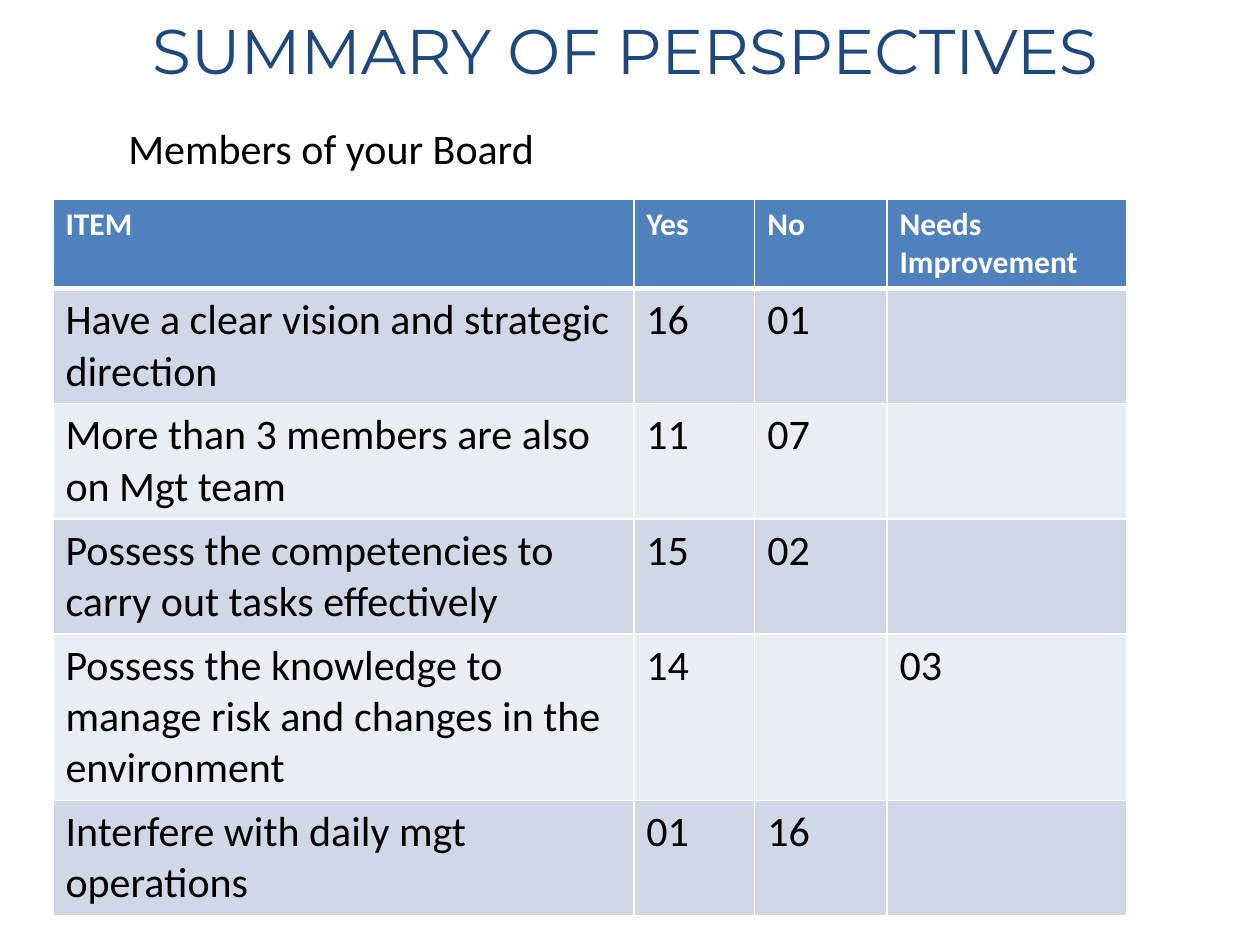
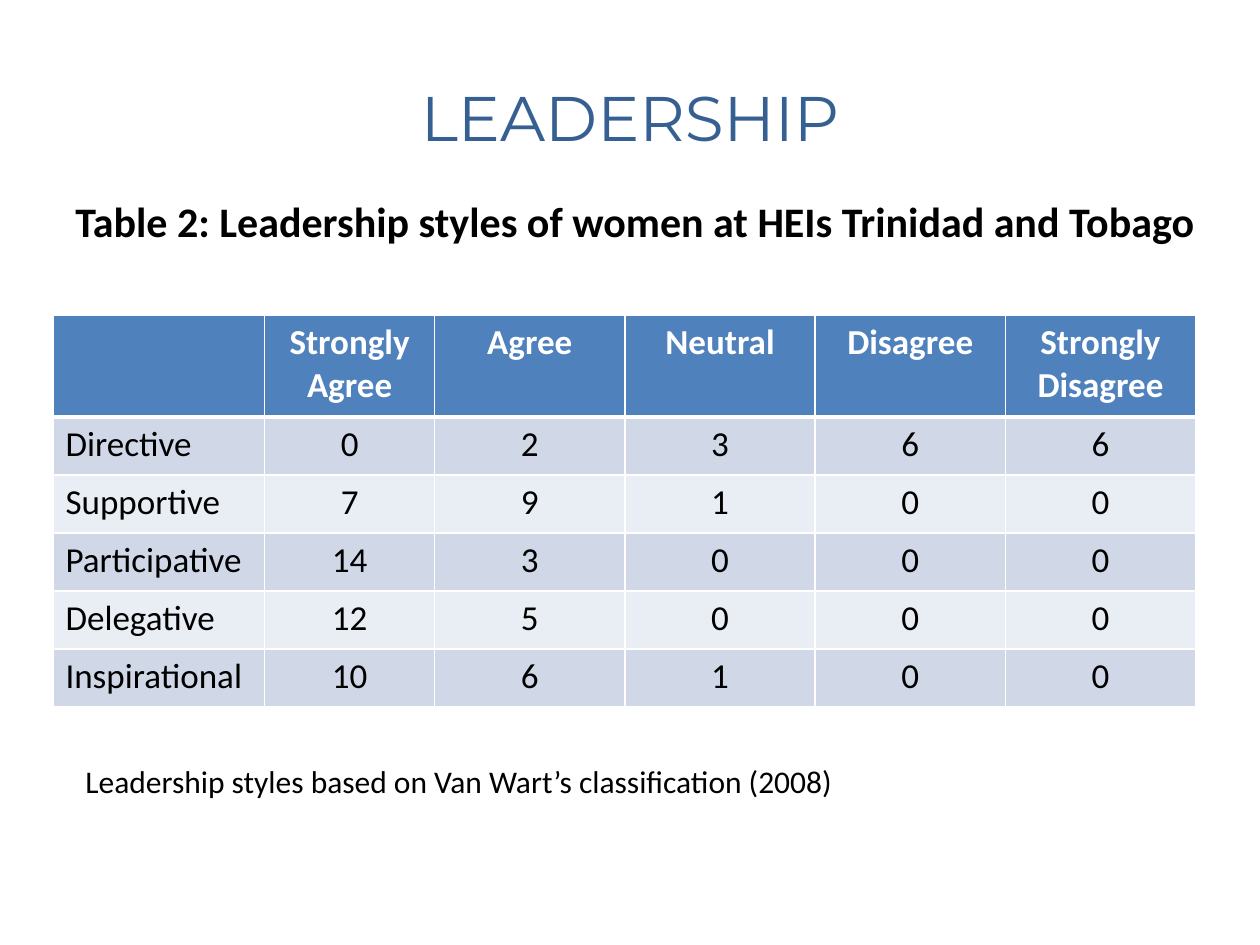
import lxml.etree
import pptx
import pptx.dml.color
import pptx.enum.text
import pptx.oxml.ns
import pptx.util

Inches = pptx.util.Inches
Pt = pptx.util.Pt
ALIGN = pptx.enum.text.PP_ALIGN
ANCHOR = pptx.enum.text.MSO_ANCHOR
AUTO_SIZE = pptx.enum.text.MSO_AUTO_SIZE

TITLE_FONT, BODY_FONT = "Montserrat", "Calibri"
TITLE_NAVY, TITLE_BLUE = "1F497D", "376092"
BLACK, WHITE = "000000", "FFFFFF"
HEADER_FILL = "4F81BD"
BAND_FILLS = ("D0D8E8", "E9EDF4")
TABLE_LEFT = 0.42
RULE, HEADER_RULE = 1, 3

BOARD_COLUMNS = [4.61, 0.96, 1.05, 1.9]
BOARD_HEIGHTS = [0.71, 0.91, 0.91, 0.91, 1.32, 0.91]
BOARD_ROWS = [
    ["ITEM", "Yes", "No", "Needs Improvement"],
    ["Have a clear vision and strategic direction", "16", "01", ""],
    ["More than 3 members are also on Mgt team", "11", "07", ""],
    ["Possess the competencies to carry out tasks effectively", "15", "02", ""],
    ["Possess the knowledge to manage risk and changes in the environment", "14", "", "03"],
    ["Interfere with daily mgt operations", "01", "16", ""],
]

STYLE_COLUMNS = [1.68, 1.35] + [1.51] * 4
STYLE_HEIGHTS = [0.81] + [0.46] * 5
STYLE_ROWS = [
    ["", "Strongly Agree", "Agree", "Neutral", "Disagree", "Strongly Disagree"],
    ["Directive", "0", "2", "3", "6", "6"],
    ["Supportive", "7", "9", "1", "0", "0"],
    ["Participative", "14", "3", "0", "0", "0"],
    ["Delegative", "12", "5", "0", "0", "0"],
    ["Inspirational", "10", "6", "1", "0", "0"],
]


def color(hex_string):
    return pptx.dml.color.RGBColor.from_string(hex_string)


def write(paragraph, text, size, hex_string, font=BODY_FONT, bold=False, align=ALIGN.LEFT):
    paragraph.alignment = align
    run = paragraph.add_run()
    run.text = text
    run.font.name = font
    run.font.size = Pt(size)
    run.font.bold = bold
    run.font.color.rgb = color(hex_string)


def add_titled_slide(presentation, text, hex_string, box):
    slide = presentation.slides.add_slide(presentation.slide_layouts[5])
    title = slide.shapes.title
    title.left, title.top, title.width, title.height = map(Inches, box)
    frame = title.text_frame
    frame.vertical_anchor = ANCHOR.MIDDLE
    write(frame.paragraphs[0], text, 36, hex_string, TITLE_FONT, align=ALIGN.CENTER)
    return slide


def add_caption(slide, text, box, size, bold=False):
    frame = slide.shapes.add_textbox(*map(Inches, box)).text_frame
    frame.word_wrap = True
    frame.auto_size = AUTO_SIZE.SHAPE_TO_FIT_TEXT
    write(frame.paragraphs[0], text, size, BLACK, bold=bold)


def set_borders(cell, top, bottom):
    """Draw white rules round a cell; top and bottom are widths in points."""
    properties = cell._tc.get_or_add_tcPr()
    qualified = pptx.oxml.ns.qn
    for side, width in (("L", RULE), ("R", RULE), ("T", top), ("B", bottom)):
        line = lxml.etree.SubElement(properties, qualified(f"a:ln{side}"), w=str(Pt(width)))
        fill = lxml.etree.SubElement(line, qualified("a:solidFill"))
        lxml.etree.SubElement(fill, qualified("a:srgbClr"), val=WHITE)


def add_banded_table(slide, top, columns, heights, rows, header_size, body_size, value_align):
    table = slide.shapes.add_table(
        len(rows), len(columns), Inches(TABLE_LEFT), Inches(top),
        Inches(sum(columns)), Inches(sum(heights))).table
    for column, width in zip(table.columns, columns):
        column.width = Inches(width)
    for row_index, (row, height, texts) in enumerate(zip(table.rows, heights, rows)):
        row.height = Inches(height)
        is_header = row_index == 0
        fill = HEADER_FILL if is_header else BAND_FILLS[(row_index - 1) % 2]
        for column_index, (cell, text) in enumerate(zip(row.cells, texts)):
            set_borders(cell, HEADER_RULE if row_index == 1 else RULE,
                        HEADER_RULE if is_header else RULE)
            cell.fill.solid()
            cell.fill.fore_color.rgb = color(fill)
            if text:
                write(cell.text_frame.paragraphs[0], text,
                      header_size if is_header else body_size,
                      WHITE if is_header else BLACK, bold=is_header,
                      align=value_align if column_index else ALIGN.LEFT)


def build_perspectives_slide(presentation):
    slide = add_titled_slide(presentation, "SUMMARY OF PERSPECTIVES", TITLE_NAVY,
                             (0.42, 0, 9.08, 0.78))
    add_banded_table(slide, 1.58, BOARD_COLUMNS, BOARD_HEIGHTS, BOARD_ROWS, 18, 24, ALIGN.LEFT)
    add_caption(slide, "Members of your Board", (0.92, 0.92, 4.5, 0.5), 24)


def build_leadership_slide(presentation):
    slide = add_titled_slide(presentation, "LEADERSHIP", TITLE_BLUE, (0.5, 0.3, 9, 1.25))
    add_banded_table(slide, 2.5, STYLE_COLUMNS, STYLE_HEIGHTS, STYLE_ROWS, 20, 20, ALIGN.CENTER)
    add_caption(slide, "Table 2: Leadership styles of women at HEIs Trinidad and Tobago",
                (0.5, 1.5, 9.17, 0.5), 24, bold=True)
    add_caption(slide, "Leadership styles based on Van Wart’s classification (2008)",
                (0.58, 6, 8.75, 0.71), 18)


def main():
    presentation = pptx.Presentation()
    presentation.slide_width = Inches(10)
    presentation.slide_height = Inches(7.5)
    build_perspectives_slide(presentation)
    build_leadership_slide(presentation)
    presentation.save("out.pptx")


if __name__ == "__main__":
    main()
